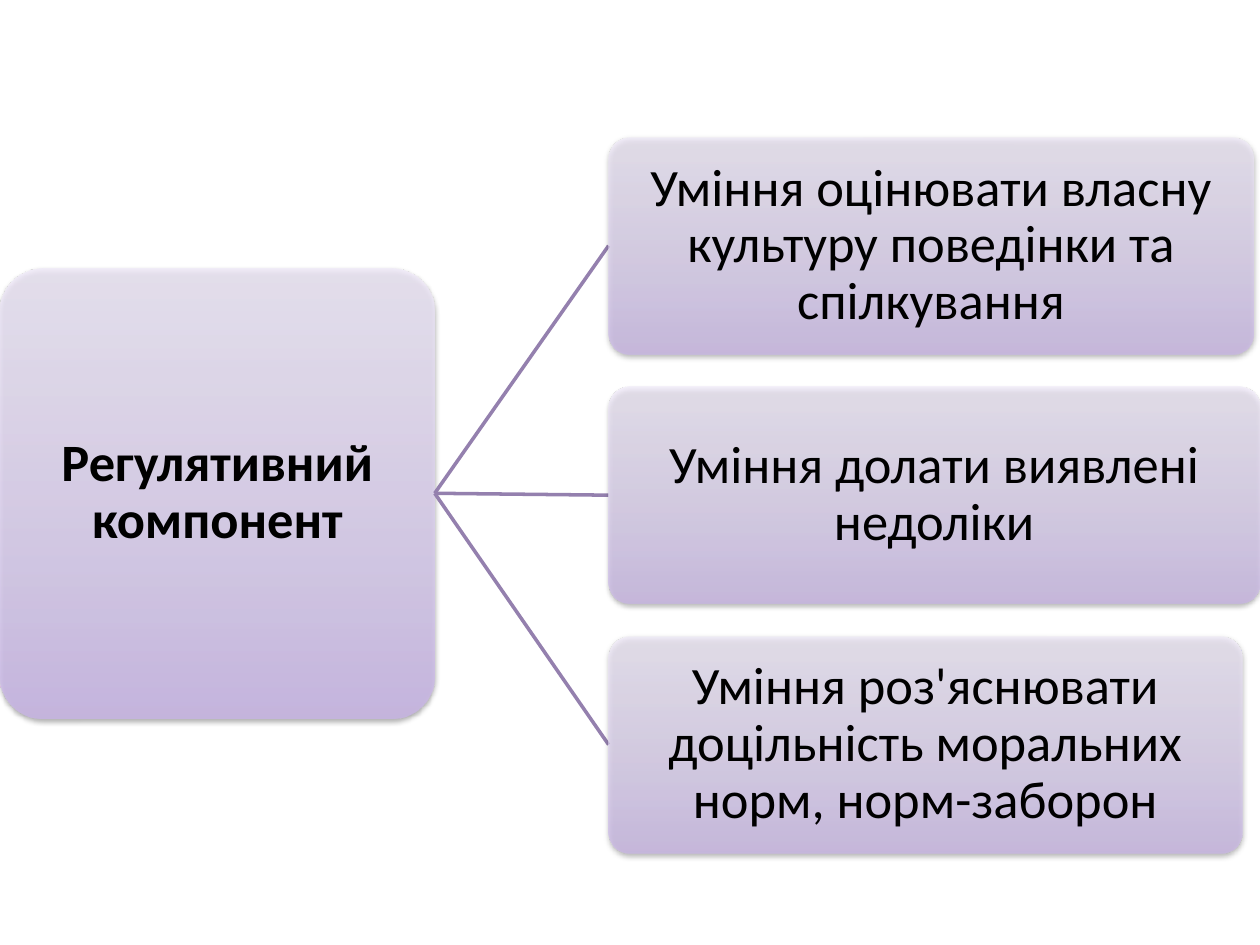
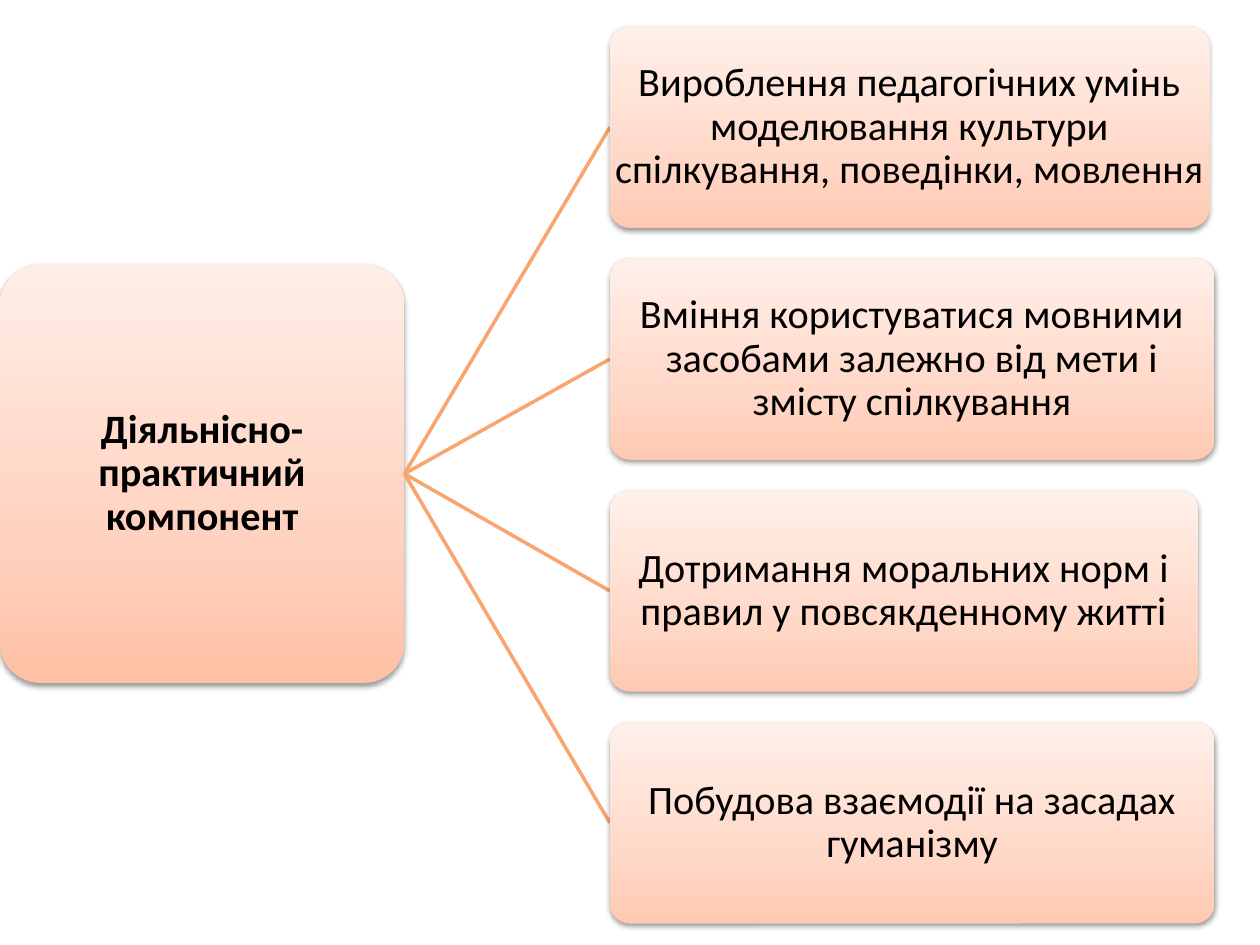
import dataclasses

import lxml.etree
import pptx
import pptx.dml.color
import pptx.enum.shapes
import pptx.enum.text
import pptx.oxml
import pptx.oxml.ns
import pptx.util

Inches = pptx.util.Inches
FONT = "Calibri"
TEXT_COLOR = "000000"
CORNER = 0.1
TEXT_INSET = Inches(0.02)
STOP_POSITIONS = (0, 35, 100)
NAMESPACE = pptx.oxml.ns.nsdecls("a")


@dataclasses.dataclass(frozen=True)
class Gradient:
    """Three colours from bottom to top, with an opacity in percent."""
    colors: tuple[str, str, str]
    opacity: int = 100


@dataclasses.dataclass(frozen=True)
class Box:
    """A rounded box with its place in inches, text and gradient."""
    left: float
    top: float
    width: float
    height: float
    text: str
    gradient: Gradient
    bold: bool = False

    @property
    def middle(self) -> float:
        """Return the height of the box's centre line."""
        return self.top + self.height / 2


@dataclasses.dataclass(frozen=True)
class Skill:
    """A branch text and the width of its box in inches."""
    text: str
    width: float


@dataclasses.dataclass(frozen=True)
class Component:
    """A root box with a column of evenly spaced skills."""
    root: Box
    skills: tuple[Skill, ...]
    skill_gradient: Gradient
    skill_left: float
    skill_top: float
    skill_height: float
    skill_pitch: float
    line_color: str
    font_size: int

    def skill_boxes(self) -> list[Box]:
        """Return the boxes of the skill column."""
        return [
            Box(self.skill_left, self.skill_top + index * self.skill_pitch,
                skill.width, self.skill_height, skill.text, self.skill_gradient)
            for index, skill in enumerate(self.skills)
        ]


PURPLE = ("C9B5E8", "D8CBEE", "F0EAF9")

COMPONENTS = (
    Component(
        root=Box(0, 2.13, 3.45, 3.57, "Регулятивний компонент", Gradient(PURPLE, 80), True),
        skills=(
            Skill("Уміння оцінювати власну культуру поведінки та спілкування", 5.12),
            Skill("Уміння долати виявлені недоліки", 5.17),
            Skill("Уміння роз'яснювати доцільність моральних норм, норм-заборон", 5.03),
        ),
        skill_gradient=Gradient(PURPLE, 70),
        skill_left=4.83, skill_top=1.09, skill_height=1.72, skill_pitch=1.98,
        line_color="9480AE", font_size=30,
    ),
    Component(
        root=Box(0, 2.1, 3.21, 3.32, "Діяльнісно-практичний компонент",
                 Gradient(("FFC0A5", "FFD2BF", "FFEEE7")), True),
        skills=(
            Skill("Вироблення педагогічних умінь моделювання культури "
                  "спілкування, поведінки, мовлення", 4.76),
            Skill("Вміння користуватися мовними засобами залежно від мети "
                  "і змісту спілкування", 4.8),
            Skill("Дотримання моральних норм і правил у повсякденному житті", 4.67),
            Skill("Побудова взаємодії на засадах гуманізму", 4.8),
        ),
        skill_gradient=Gradient(("FFC9B1", "FFD8C8", "FFF0EA")),
        skill_left=4.84, skill_top=0.21, skill_height=1.6, skill_pitch=1.84,
        line_color="F8A56E", font_size=23,
    ),
)


def color(value: str) -> pptx.dml.color.RGBColor:
    """Turn a hex string into a colour."""
    return pptx.dml.color.RGBColor.from_string(value)


def set_gradient(shape, gradient: Gradient) -> None:
    """Fill a shape with a three-stop gradient rising from the bottom."""
    shape.fill.gradient()
    shape.fill.gradient_angle = 90
    stops = shape._element.spPr.find(
        f"{pptx.oxml.ns.qn('a:gradFill')}/{pptx.oxml.ns.qn('a:gsLst')}")
    for stop in list(stops):
        stops.remove(stop)
    for position, value in zip(STOP_POSITIONS, gradient.colors):
        stops.append(pptx.oxml.parse_xml(
            f'<a:gs {NAMESPACE} pos="{position * 1000}"><a:srgbClr val="{value}">'
            f'<a:alpha val="{gradient.opacity * 1000}"/></a:srgbClr></a:gs>'))


def set_shadow(shape) -> None:
    """Give a shape a soft shadow straight below it."""
    shape.shadow.inherit = False
    effects = shape._element.spPr.find(pptx.oxml.ns.qn("a:effectLst"))
    effects.append(pptx.oxml.parse_xml(
        f'<a:outerShdw {NAMESPACE} blurRad="{pptx.util.Pt(3.1)}" '
        f'dist="{pptx.util.Pt(1.6)}" dir="5400000" rotWithShape="0">'
        '<a:srgbClr val="000000"><a:alpha val="38000"/></a:srgbClr></a:outerShdw>'))


def add_box(slide, box: Box, font_size: int) -> None:
    """Draw a rounded box and the centred text that spans its full width."""
    place = [Inches(length) for length in (box.left, box.top, box.width, box.height)]
    shape = slide.shapes.add_shape(
        pptx.enum.shapes.MSO_SHAPE.ROUNDED_RECTANGLE, *place)
    shape.adjustments[0] = CORNER
    shape.line.fill.background()
    set_gradient(shape, box.gradient)
    set_shadow(shape)

    frame = slide.shapes.add_textbox(*place).text_frame
    frame.word_wrap = True
    frame.vertical_anchor = pptx.enum.text.MSO_ANCHOR.MIDDLE
    frame.margin_left = frame.margin_right = TEXT_INSET
    frame.margin_top = frame.margin_bottom = TEXT_INSET
    paragraph = frame.paragraphs[0]
    paragraph.alignment = pptx.enum.text.PP_ALIGN.CENTER
    paragraph.line_spacing = 0.9
    run = paragraph.add_run()
    run.text = box.text
    run.font.name = FONT
    run.font.size = pptx.util.Pt(font_size)
    run.font.bold = box.bold
    run.font.color.rgb = color(TEXT_COLOR)


def add_branch(slide, root: Box, skill: Box, line_color: str) -> None:
    """Join the root's right side to the skill's left side."""
    connector = slide.shapes.add_connector(
        pptx.enum.shapes.MSO_CONNECTOR.STRAIGHT,
        Inches(root.left + root.width), Inches(root.middle),
        Inches(skill.left), Inches(skill.middle))
    connector.line.color.rgb = color(line_color)
    connector.line.width = pptx.util.Pt(2)
    lxml.etree.SubElement(connector._element.spPr, pptx.oxml.ns.qn("a:effectLst"))


def add_component_slide(presentation, component: Component) -> None:
    """Add a slide with a root box branching into its skills."""
    slide = presentation.slides.add_slide(presentation.slide_layouts[6])
    add_box(slide, component.root, component.font_size)
    for skill in component.skill_boxes():
        add_branch(slide, component.root, skill, component.line_color)
        add_box(slide, skill, component.font_size)


def main() -> None:
    """Build and save the presentation."""
    presentation = pptx.Presentation()
    presentation.slide_width = Inches(10)
    presentation.slide_height = Inches(7.5)
    for component in COMPONENTS:
        add_component_slide(presentation, component)
    presentation.save("out.pptx")


if __name__ == "__main__":
    main()
